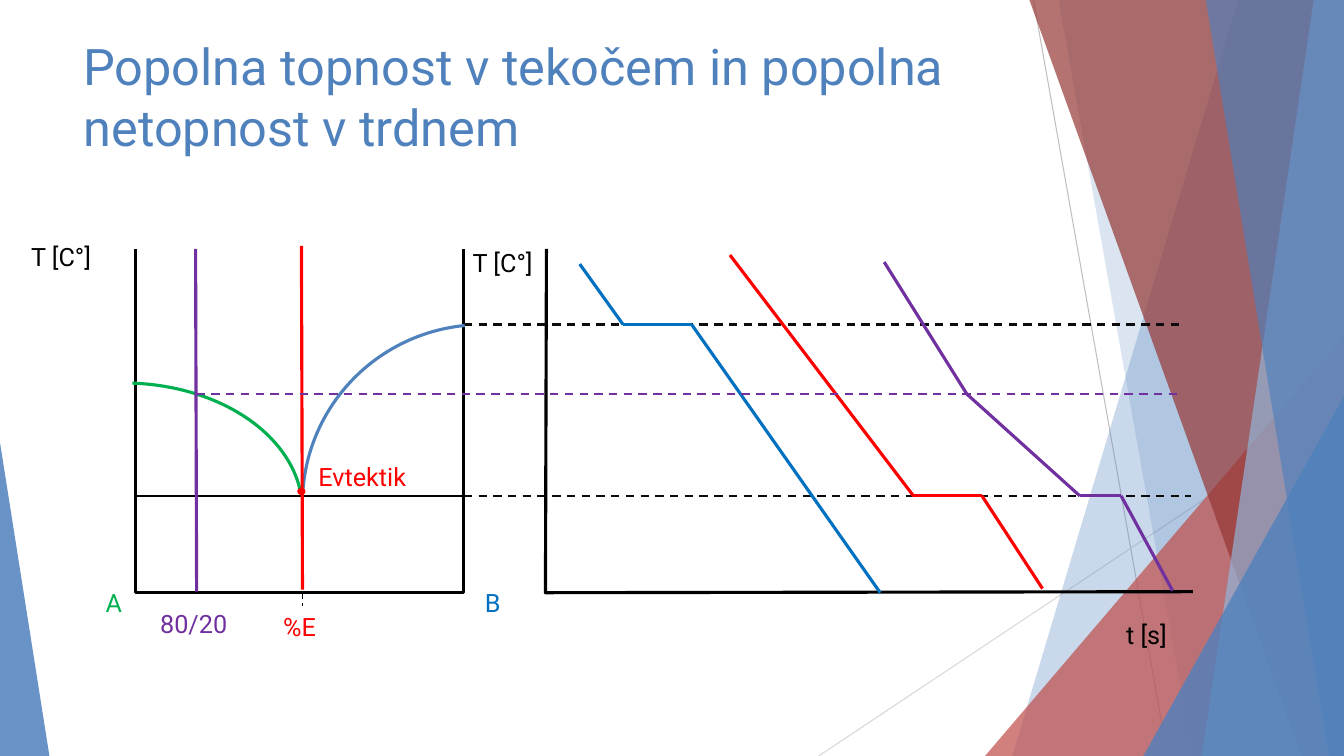
"""Build a slide on a eutectic phase diagram and its cooling curves."""
from itertools import pairwise

from lxml.etree import SubElement
from pptx import Presentation
from pptx.dml.color import RGBColor
from pptx.enum.dml import MSO_LINE_DASH_STYLE as Dash
from pptx.enum.shapes import MSO_CONNECTOR as Connector, MSO_SHAPE as Preset
from pptx.oxml.ns import qn
from pptx.util import Inches, Pt

COLORS = {
    "black": "000000", "ink": "0C0C0C", "red": "FF0000", "purple": "7030A0",
    "green": "00B050", "blue": "0070C0", "steel": "4F81BD", "sky": "93B3D7",
    "brick": "C0504D", "wine": "953734", "silver": "BFBFBF", "mist": "D8D8D8",
}
WIDTH, HEIGHT = 13.33, 7.5
TOP, MELT_B, LIQUIDUS, EUTECTIC, BASE = 2.47, 3.22, 3.91, 4.92, 5.88
LEFT, MIX, E_POINT, RIGHT, TIME_ZERO = 1.34, 1.95, 3, 4.6, 5.41

deck = Presentation()
deck.slide_width, deck.slide_height = Inches(WIDTH), Inches(HEIGHT)
page = deck.slides.add_slide(deck.slide_layouts[6])


def paint(shape, fill=None, alpha=100, line=None, weight=2.25):
    shape.shadow.inherit = False
    if fill:
        shape.fill.solid()
        shape.fill.fore_color.rgb = RGBColor.from_string(COLORS[fill])
        color = shape.fill._xPr.find(".//" + qn("a:srgbClr"))
        SubElement(color, qn("a:alpha"), val=str(alpha * 1000))
    else:
        shape.fill.background()
    if line:
        shape.line.color.rgb = RGBColor.from_string(COLORS[line])
        shape.line.width = Pt(weight)
    else:
        shape.line.fill.background()


def draw_line(start, end, color, weight=2.25, dash=None):
    line = page.shapes.add_connector(Connector.STRAIGHT, *map(Inches, start + end))
    line.line.color.rgb = RGBColor.from_string(COLORS[color])
    line.line.width = Pt(weight)
    if dash:
        line.line.dash_style = dash
    SubElement(line._element.spPr, qn("a:effectLst"))


draw_line((10.25, 0), (11.58, HEIGHT), "silver", 0.75)
draw_line((WIDTH, 4.03), (8.12, HEIGHT), "mist", 0.75)

# Each facet: top and bottom x of a band, or left, top, width and apex of a triangle
facets = [
    ((12.28, 10.04), "steel", 30),
    ((10.5, 11.83), "steel", 20),
    ((9.77, 3.33, 3.56, 1), "brick", 72),
    ((10.21, 12.91), "wine", 70),
    ((13.03, 11.92), "sky", 70),
    ((11.96, 13.18), "steel", 65),
    ((11.34, 3.93, 1.99, 1), "steel", 80),
    ((0, 4.39, 0.49, 0), "steel", 85),
]
for outline, color, alpha in facets:
    if len(outline) == 2:
        upper, lower = outline
        builder = page.shapes.build_freeform(Inches(upper), 0)
        corners = [(WIDTH, 0), (WIDTH, HEIGHT), (lower, HEIGHT)]
        builder.add_line_segments([(Inches(x), Inches(y)) for x, y in corners])
        facet = builder.convert_to_shape()
    else:
        left, top, width, apex = outline
        facet = page.shapes.add_shape(
            Preset.ISOSCELES_TRIANGLE, *map(Inches, (left, top, width, HEIGHT - top)))
        facet.adjustments[0] = apex
    paint(facet, color, alpha)

axes = [
    [(LEFT, TOP), (LEFT, BASE), (RIGHT, BASE), (RIGHT, TOP)],
    [(TIME_ZERO + 0.01, TOP), (TIME_ZERO, BASE), (11.83, BASE - 0.01)],
]
for points in axes:
    (start, *rest) = [(Inches(x), Inches(y)) for x, y in points]
    builder = page.shapes.build_freeform(*start)
    builder.add_line_segments(rest, close=False)
    paint(builder.convert_to_shape(), line="black")

draw_line((RIGHT, MELT_B), (11.72, MELT_B), "ink", 1.5, Dash.DASH)
draw_line((RIGHT, EUTECTIC), (11.81, EUTECTIC), "ink", 1.5, Dash.DASH)

cooling_curves = {
    "blue": [(5.75, 2.62), (6.18, MELT_B), (6.86, MELT_B), (8.73, BASE)],
    "red": [(7.24, 2.53), (9.06, EUTECTIC), (9.74, EUTECTIC), (10.34, 5.84)],
    "purple": [(8.77, 2.6), (9.59, LIQUIDUS), (10.71, EUTECTIC),
               (11.12, EUTECTIC), (11.63, 5.86)],
}
for color, points in cooling_curves.items():
    for start, end in pairwise(points):
        draw_line(start, end, color)

liquidus_arcs = [
    ((-0.55, 3.8, 3.55, 2.53), 0, "green"),
    ((3.01, 3.21, 3.55, 3.57), 270, "steel"),
]
for place, turn, color in liquidus_arcs:
    arc = page.shapes.add_shape(Preset.ARC, *map(Inches, place))
    arc.adjustments[0], arc.adjustments[1] = 164.4, 212.6
    arc.rotation = turn
    paint(arc, line=color)

dot = page.shapes.add_shape(Preset.OVAL, *map(Inches, (2.96, 4.85, 0.06, 0.05)))
paint(dot, "red", line="red", weight=1.5)
draw_line((LEFT, EUTECTIC), (RIGHT, EUTECTIC), "black", 1)
draw_line((E_POINT, EUTECTIC), (E_POINT, 6.01), "black", 1, Dash.DASH)
draw_line((E_POINT - 0.01, 2.44), (E_POINT, 5.85), "red")
draw_line((MIX - 0.01, TOP), (MIX, 5.87), "purple")
draw_line((MIX, LIQUIDUS), (11.69, LIQUIDUS), "purple", 1.5, Dash.DASH)

labels = [
    ("Popolna topnost v tekočem in popolna netopnost v trdnem",
     (0.73, 0.3, 9.4, 1.44), "steel", 36),
    ("T [C°]", (0.21, 2.34, 0.99, 0.4), "black", 18),
    ("T [C°]", (4.59, 2.4, 0.99, 0.4), "black", 18),
    ("t [s]", (11.07, 6.09, 0.99, 0.4), "black", 18),
    ("A", (0.95, 5.78, 0.37, 0.4), "green", 18),
    ("B", (4.71, 5.78, 0.65, 0.4), "blue", 18),
    ("%E", (2.71, 6.02, 0.65, 0.4), "red", 18),
    ("80/20", (1.49, 5.99, 1.05, 0.4), "purple", 18),
    ("Evtektik", (3.06, 4.53, 2.14, 0.4), "red", 18),
]
for words, place, color, size in labels:
    box = page.shapes.add_textbox(*map(Inches, place))
    box.text_frame.word_wrap = True
    box.text_frame.text = words
    font = box.text_frame.paragraphs[0].runs[0].font
    font.name, font.size = "Roboto", Pt(size)
    font.color.rgb = RGBColor.from_string(COLORS[color])

deck.save("out.pptx")
